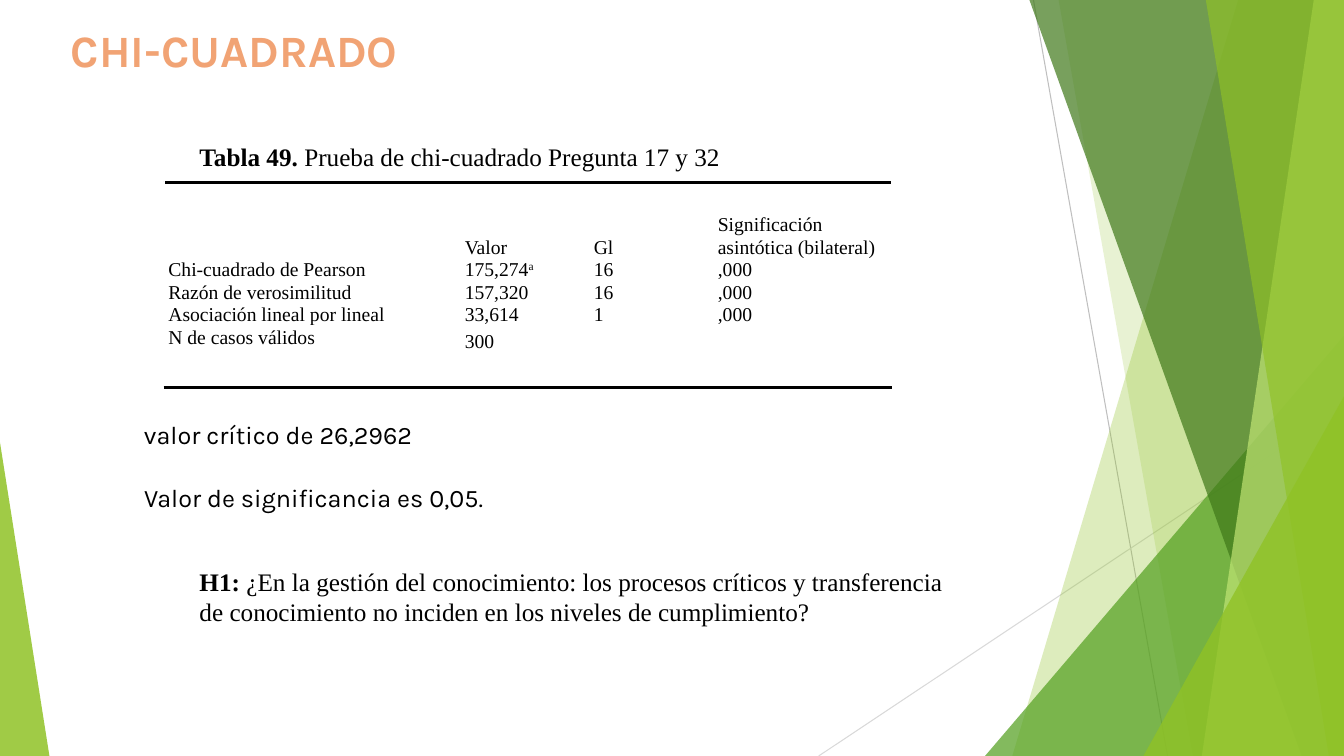
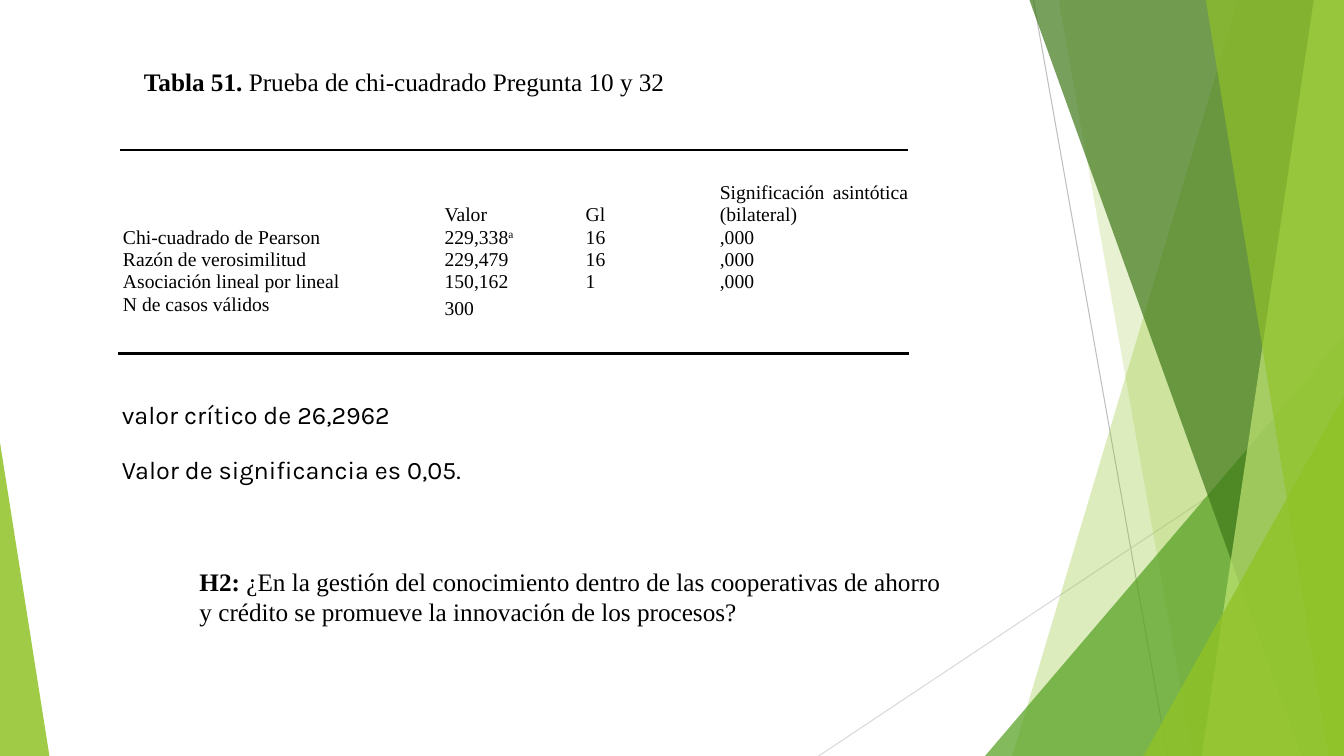
from lxml.etree import SubElement
from pptx import Presentation
from pptx.dml.color import RGBColor
from pptx.enum.shapes import MSO_CONNECTOR, MSO_SHAPE
from pptx.enum.text import MSO_ANCHOR, MSO_AUTO_SIZE, PP_ALIGN
from pptx.oxml import parse_xml
from pptx.oxml.ns import nsdecls, qn
from pptx.util import Inches, Pt

W, H = 13.33, 7.5
SERIF, SANS = "Times New Roman", "Karla"
COLORS = {
    "white": "FFFFFF", "black": "000000", "gray": "BFBFBF", "silver": "D9D9D9",
    "lime": "90C226", "green": "54A021", "forest": "3F7819", "pale": "C0E474",
    "orange": "E76618", "peach": "F1A374", "cream": "FAE0D1",
}
ROW_HEIGHTS = [0.23, 0.45, 0.22, 0.22, 0.22, 0.26, 0.23]
HEADERS = ["", "Valor", "Gl", "Significación asintótica (bilateral)"]
TESTS = [
    ("Chi-cuadrado de Pearson", "16", ",000"),
    ("Razón de verosimilitud", "16", ",000"),
    ("Asociación lineal por lineal", "1", ",000"),
    ("N de casos válidos", "", ""),
]
CRITICAL = "valor crítico de 26,2962"
SIGNIFICANCE = "Valor de significancia es 0,05."


def rgb(name):
    """Return the named colour."""
    return RGBColor.from_string(COLORS[name])


def box(*at):
    """Turn inches into a tuple of lengths."""
    return tuple(Inches(v) for v in at)


def add_run(p, text, size=18, font=SERIF, bold=False, color="black"):
    """Add one formatted run to a paragraph."""
    r = p.add_run()
    r.text = text
    r.font.size, r.font.name, r.font.bold = Pt(size), font, bold
    r.font.color.rgb = rgb(color)
    return r


def paint(sp, color, alpha):
    """Give a shape a translucent fill and no outline."""
    sp.shadow.inherit = False
    sp.fill.solid()
    sp.fill.fore_color.rgb = rgb(color)
    clr = sp.element.xpath("./p:spPr/a:solidFill/a:srgbClr")[0]
    SubElement(clr, qn("a:alpha"), val=str(alpha * 1000))
    sp.line.fill.background()


def add_ray(grp, start, end, color):
    """Draw a thin straight line."""
    ln = grp.shapes.add_connector(MSO_CONNECTOR.STRAIGHT, *box(*start, *end))
    ln.line.color.rgb = rgb(color)
    ln.line.width = Pt(0.75)
    SubElement(ln.element.spPr, qn("a:effectLst"))


def add_band(grp, top_x, bottom_x, color, alpha):
    """Draw a full-height band with a slanted left edge."""
    fb = grp.shapes.build_freeform(*box(top_x, 0))
    fb.add_line_segments([box(W, 0), box(W, H), box(bottom_x, H)])
    paint(fb.convert_to_shape(), color, alpha)


def add_wedge(grp, left, top, width, tip, color, alpha):
    """Draw a triangle standing on the bottom edge."""
    sp = grp.shapes.add_shape(MSO_SHAPE.ISOSCELES_TRIANGLE, *box(left, top, width, H - top))
    sp.adjustments[0] = tip
    paint(sp, color, alpha)


def add_decor(prs, s):
    """Draw the facets once and move them to the slide master."""
    grp = s.shapes.add_group_shape()
    add_ray(grp, (10.25, 0), (11.58, H), "gray")
    add_ray(grp, (W, 4.03), (8.12, H), "silver")
    add_band(grp, 12.28, 10.04, "lime", 30)
    add_band(grp, 10.5, 11.83, "lime", 20)
    add_wedge(grp, 9.77, 3.33, 3.56, 1, "green", 72)
    add_band(grp, 10.21, 12.91, "forest", 70)
    add_band(grp, 13.03, 11.92, "pale", 70)
    add_band(grp, 11.96, 13.18, "lime", 65)
    add_wedge(grp, 11.34, 3.93, 1.99, 1, "lime", 80)
    add_wedge(grp, 0, 4.39, 0.49, 0, "lime", 85)
    for i, props in enumerate(grp.element.xpath(".//p:cNvPr"), 100):
        props.set("id", str(i))
    prs.slide_master.shapes.element.append(grp.element)


def add_title(s, text):
    """Place the title with gradient letters and an outline."""
    sp = s.shapes.title
    sp.left, sp.top, sp.width, sp.height = box(0.27, 0.17, 4.11, 0.64)
    tf = sp.text_frame
    tf.word_wrap, tf.auto_size = True, MSO_AUTO_SIZE.NONE
    p = tf.paragraphs[0]
    p.alignment = PP_ALIGN.CENTER
    r = add_run(p, text, 32, SANS, True, "orange")
    rPr = r._r.get_or_add_rPr()
    rPr.remove(rPr.find(qn("a:solidFill")))
    stops = "".join(
        f'<a:gs pos="{pos}000"><a:srgbClr val="{COLORS[c]}"/></a:gs>'
        for pos, c in ((0, "orange"), (4, "peach"), (87, "cream")))
    rPr.insert(0, parse_xml(
        f'<a:gradFill {nsdecls("a")}><a:gsLst>{stops}</a:gsLst>'
        '<a:lin ang="5400000" scaled="0"/></a:gradFill>'))
    rPr.insert(0, parse_xml(
        f'<a:ln w="12700" {nsdecls("a")}><a:solidFill>'
        f'<a:srgbClr val="{COLORS["orange"]}"/></a:solidFill></a:ln>'))


def add_text(s, at, text, lead="", font=SERIF, wrap=False):
    """Add a text box with an optional bold lead."""
    tf = s.shapes.add_textbox(*box(*at)).text_frame
    tf.word_wrap, tf.auto_size = wrap, MSO_AUTO_SIZE.SHAPE_TO_FIT_TEXT
    p = tf.paragraphs[0]
    if lead:
        add_run(p, lead, font=font, bold=True)
    add_run(p, text, font=font)


def add_rule(cell, side):
    """Draw a black border on the top or bottom of a cell."""
    cell._tc.get_or_add_tcPr().insert(0, parse_xml(
        f'<a:ln{side} w="25400" {nsdecls("a")}><a:solidFill>'
        f'<a:srgbClr val="{COLORS["black"]}"/></a:solidFill></a:ln{side}>'))


def fill_cell(cell, text, anchor, note=""):
    """Format a cell and write its text and superscript note."""
    cell.fill.solid()
    cell.fill.fore_color.rgb = rgb("white")
    cell.margin_left = Inches(0.04)
    cell.margin_right = cell.margin_top = cell.margin_bottom = 0
    cell.vertical_anchor = anchor
    p = cell.text_frame.paragraphs[0]
    p.alignment, p.line_spacing = PP_ALIGN.JUSTIFY, Pt(16)
    if text:
        add_run(p, text, 14)
    if note:
        add_run(p, note, 14)._r.get_or_add_rPr().set("baseline", "30000")


def add_chi_table(s, left, top, widths, values):
    """Add a chi-square table ruled above and below."""
    blank = [""] * len(widths)
    body = [[name, value, *rest] for (name, *rest), value in zip(TESTS, values)]
    rows = [blank, HEADERS, *body, blank]
    at = box(left, top, sum(widths), sum(ROW_HEIGHTS))
    tbl = s.shapes.add_table(len(rows), len(widths), *at).table
    tbl.first_row = tbl.horz_banding = False
    for col, width in zip(tbl.columns, widths):
        col.width = Inches(width)
    for i, (row, height) in enumerate(zip(rows, ROW_HEIGHTS)):
        tbl.rows[i].height = Inches(height)
        for j, text in enumerate(row):
            anchor = MSO_ANCHOR.MIDDLE if j else MSO_ANCHOR.TOP
            if row is HEADERS:
                anchor = MSO_ANCHOR.BOTTOM
            fill_cell(tbl.cell(i, j), text, anchor, "a" if (i, j) == (2, 1) else "")
    last = len(rows) - 1
    for i, side in ((0, "T"), (last, "B")):
        for j in range(len(widths)):
            add_rule(tbl.cell(i, j), side)
        tbl.cell(i, 0).merge(tbl.cell(i, len(widths) - 1))


def add_findings(s, left, tops, lead, hypothesis):
    """Add the two test values and the hypothesis."""
    add_text(s, (left, tops[0], 2.96, 0.4), CRITICAL, font=SANS)
    add_text(s, (left, tops[1], 3.58, 0.4), SIGNIFICANCE, font=SANS)
    add_text(s, (1.88, 5.57, 7.59, 0.71), hypothesis, lead, wrap=True)


def main():
    """Build and save the two slides."""
    prs = Presentation()
    prs.slide_width, prs.slide_height = box(W, H)

    s = prs.slides.add_slide(prs.slide_layouts[5])
    add_decor(prs, s)
    add_title(s, "CHI-CUADRADO")
    add_chi_table(s, 1.63, 1.81, [2.94, 1.28, 1.23, 1.76],
                  ["175,274", "157,320", "33,614", "300"])
    add_text(s, (1.88, 1.35, 5.37, 0.4), "Prueba de chi-cuadrado Pregunta 17 y 32", "Tabla 49. ")
    add_findings(s, 1.33, (4.11, 4.74), "H1: ",
                 "¿En la gestión del conocimiento: los procesos críticos y transferencia "
                 "de conocimiento no inciden en los niveles de cumplimiento?")

    s = prs.slides.add_slide(prs.slide_layouts[6])
    add_text(s, (1.33, 0.61, 5.37, 0.4), "Prueba de chi-cuadrado Pregunta 10 y 32", "Tabla 51. ")
    add_chi_table(s, 1.18, 1.49, [3.19, 1.4, 1.33, 1.91],
                  ["229,338", "229,479", "150,162", "300"])
    add_findings(s, 1.11, (3.91, 4.46), "H2: ",
                 "¿En la gestión del conocimiento dentro de las cooperativas de ahorro "
                 "y crédito se promueve la innovación de los procesos?")
    prs.save("out.pptx")


if __name__ == "__main__":
    main()
